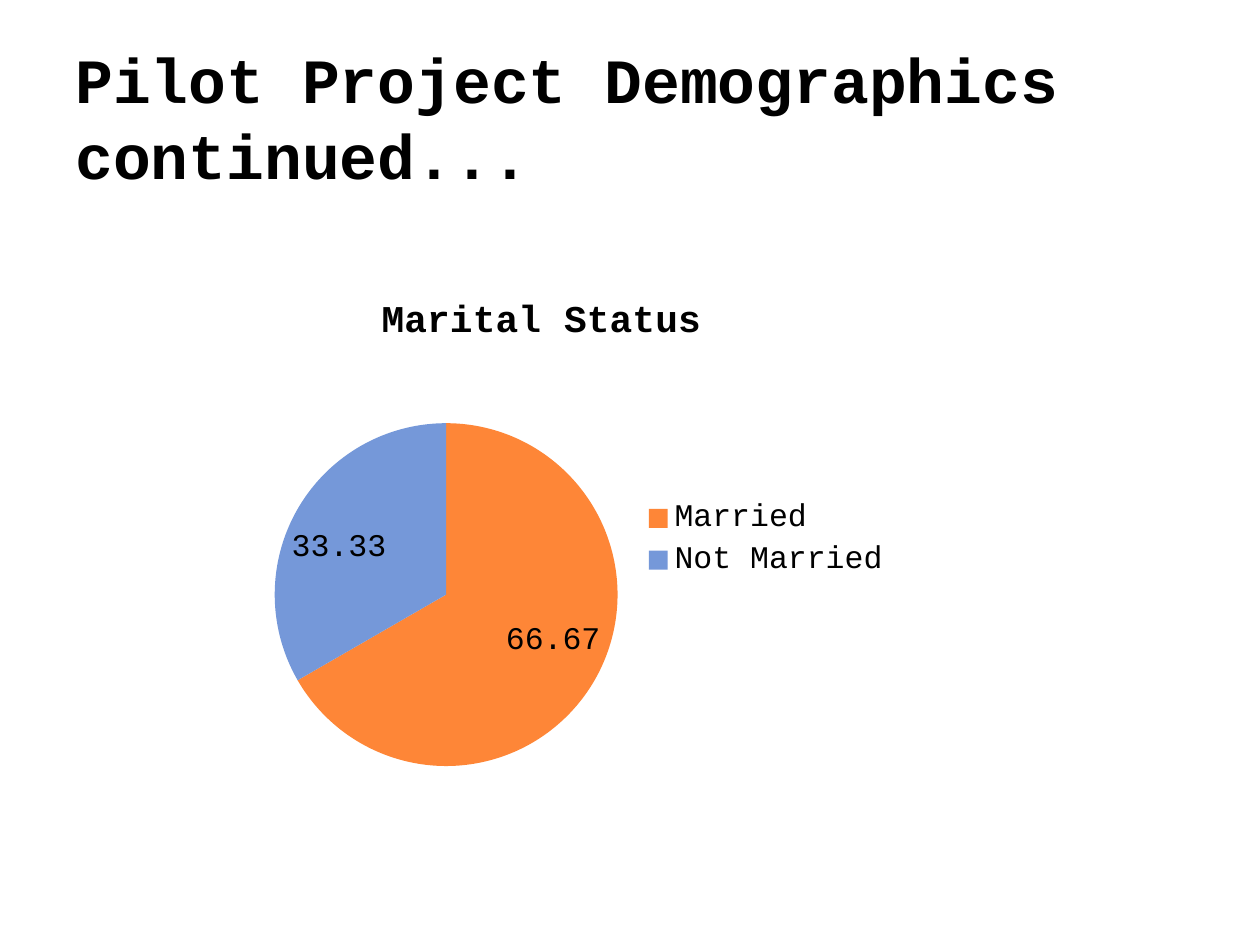
from dataclasses import dataclass

from lxml import etree
from pptx import Presentation
from pptx.chart.data import CategoryChartData
from pptx.dml.color import RGBColor
from pptx.enum.chart import XL_CHART_TYPE, XL_LABEL_POSITION, XL_LEGEND_POSITION
from pptx.enum.text import MSO_ANCHOR
from pptx.oxml.ns import qn
from pptx.util import Inches, Pt

PIE = XL_CHART_TYPE.PIE
BEST_FIT = XL_LABEL_POSITION.BEST_FIT
RIGHT = XL_LEGEND_POSITION.RIGHT
MIDDLE = MSO_ANCHOR.MIDDLE


@dataclass(frozen=True)
class Theme:
    font: str = "Courier New"
    text: RGBColor = RGBColor(0x00, 0x00, 0x00)
    married: RGBColor = RGBColor(0xFE, 0x86, 0x37)
    not_married: RGBColor = RGBColor(0x75, 0x98, 0xD9)
    title_size: float = 36
    chart_title_size: float = 21.6
    chart_size: float = 18


THEME = Theme()


def style_font(font, size, bold=False):
    font.name = THEME.font
    font.size = Pt(size)
    font.bold = bold
    font.color.rgb = THEME.text


def add_title(s, text, left, top, width, height):
    tf = s.shapes.add_textbox(Inches(left), Inches(top), Inches(width), Inches(height)).text_frame
    tf.word_wrap = True
    tf.vertical_anchor = MIDDLE
    r = tf.paragraphs[0].add_run()
    r.text = text
    style_font(r.font, THEME.title_size, bold=True)


def set_layout(parent, index, **settings):
    """Place a chart part by hand, in fractions of the chart area."""
    layout = parent.find(qn("c:layout"))
    if layout is None:
        layout = etree.Element(qn("c:layout"))
        parent.insert(index, layout)
    manual = etree.SubElement(layout, qn("c:manualLayout"))
    for name, value in settings.items():
        etree.SubElement(manual, qn(f"c:{name}")).set("val", str(value))


def add_pie(s, name, slices, left, top, width, height):
    data = CategoryChartData()
    data.categories = [label for label, _, _ in slices]
    data.add_series(name, [value for _, value, _ in slices])
    chart = s.shapes.add_chart(
        PIE, Inches(left), Inches(top), Inches(width), Inches(height), data
    ).chart
    style_font(chart.font, THEME.chart_size)

    # Chart title
    chart.has_title = True
    r = chart.chart_title.text_frame.paragraphs[0].add_run()
    r.text = name
    style_font(r.font, THEME.chart_title_size, bold=True)
    title = chart.element.find(".//" + qn("c:title"))
    set_layout(title, 1, xMode="edge", yMode="edge", x=0.26, y=0.05)

    # Legend
    chart.has_legend = True
    chart.legend.position = RIGHT
    chart.legend.include_in_layout = False
    style_font(chart.legend.font, THEME.chart_size)

    # Slices and value labels
    plot = chart.plots[0]
    plot.vary_by_categories = True
    for i, (_, _, color) in enumerate(slices):
        fill = plot.series[0].points[i].format.fill
        fill.solid()
        fill.fore_color.rgb = color
    plot.has_data_labels = True
    labels = plot.data_labels
    labels.show_value = True
    labels.show_percentage = False
    labels.position = BEST_FIT
    style_font(labels.font, THEME.chart_size)
    plot_area = chart.element.find(".//" + qn("c:plotArea"))
    set_layout(plot_area, 0, layoutTarget="inner", xMode="edge", yMode="edge",
               x=0.12, y=0.29, w=0.48, h=0.62)


def main():
    prs = Presentation()
    prs.slide_width, prs.slide_height = Inches(10), Inches(7.5)
    s = prs.slides.add_slide(prs.slide_layouts[6])
    add_title(s, "Pilot Project Demographics continued...", 0.5, 0.3, 9, 1.25)
    slices = [
        ("Married", 66.67, THEME.married),
        ("Not Married", 33.33, THEME.not_married),
    ]
    add_pie(s, "Marital Status", slices, 1.5, 2.08, 5.67, 4.4)
    prs.save("out.pptx")


if __name__ == "__main__":
    main()
